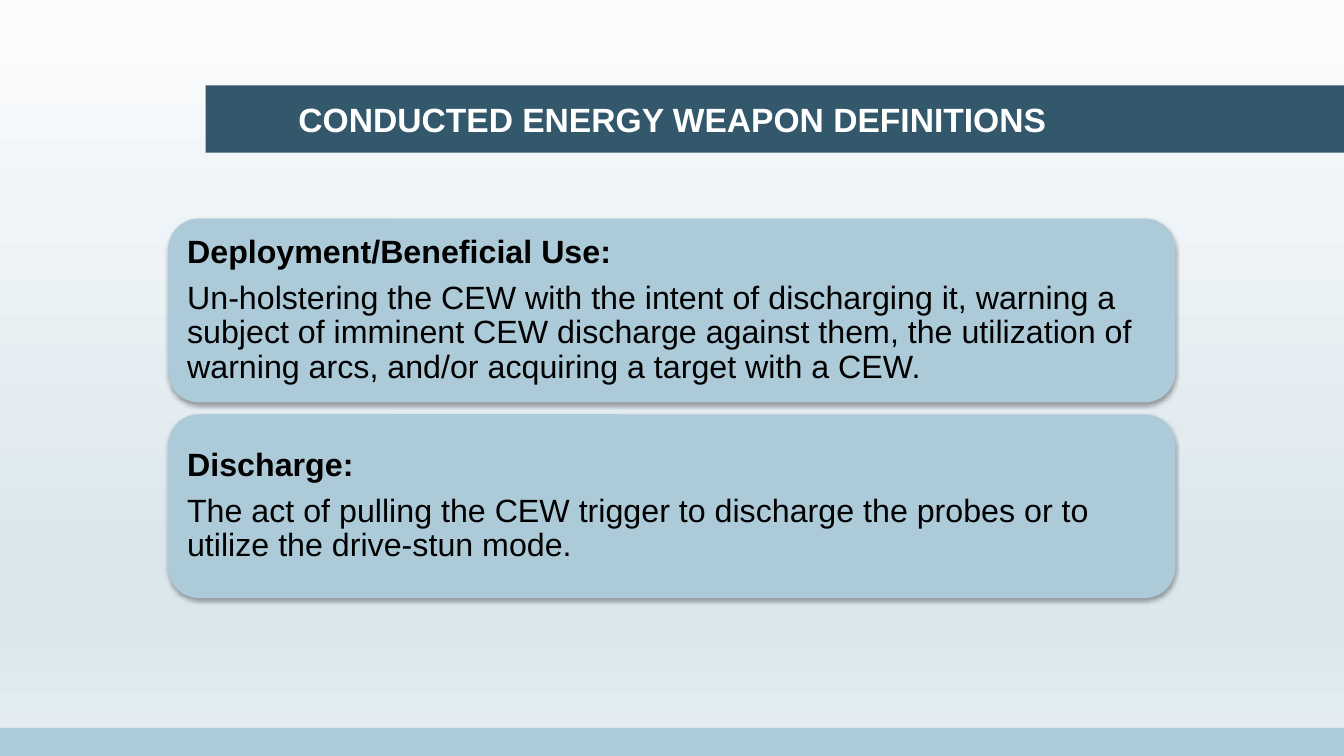
from dataclasses import dataclass

from lxml import etree
from pptx import Presentation
from pptx import util as u
from pptx.dml.color import RGBColor
from pptx.enum import shapes, text
from pptx.oxml.ns import qn


@dataclass(frozen=True)
class Theme:
    font: str = "Arial"
    banner: str = "33576B"
    panel: str = "ACCAD8"
    light: str = "FFFFFF"
    ink: str = "000000"
    title_size: int = 24
    body_size: int = 23
    backdrop: tuple = ((0, "FBFCFD"), (74, "DAE7ED"), (83, "DAE7ED"), (100, "E6EFF3"))


THEME = Theme()
DEFINITIONS = [
    ("Deployment/Beneficial Use:",
     "Un-holstering the CEW with the intent of discharging it, warning a subject of "
     "imminent CEW discharge against them, the utilization of warning arcs, and/or "
     "acquiring a target with a CEW."),
    ("Discharge:",
     "The act of pulling the CEW trigger to discharge the probes or to utilize the "
     "drive-stun mode."),
]


def add_child(parent, tag, **attributes):
    child = etree.SubElement(parent, qn(tag))
    for key, value in attributes.items():
        child.set(key, str(value))
    return child


def write(paragraph, words, size, color, bold=False, align=text.PP_ALIGN.LEFT,
          line_spacing=1.0, after=0):
    paragraph.alignment = align
    paragraph.line_spacing = line_spacing
    paragraph.space_before = u.Pt(0)
    paragraph.space_after = u.Pt(after)
    run = paragraph.add_run()
    run.text = words
    run.font.name = THEME.font
    run.font.size = u.Pt(size)
    run.font.bold = bold
    run.font.color.rgb = RGBColor.from_string(color)


def set_frame(frame, inset):
    frame.word_wrap = True
    frame.auto_size = text.MSO_AUTO_SIZE.NONE
    frame.vertical_anchor = text.MSO_ANCHOR.MIDDLE
    frame.margin_left = frame.margin_right = u.Cm(inset)
    frame.margin_top = frame.margin_bottom = u.Cm(inset)


def add_panel(slide, kind, box, color):
    panel = slide.shapes.add_shape(kind, *map(u.Cm, box))
    panel.shadow.inherit = False
    panel.fill.solid()
    panel.fill.fore_color.rgb = RGBColor.from_string(color)
    panel.line.fill.background()
    return panel


def paint_backdrop(slide):
    slide.background.fill.gradient()
    gradient = slide.element.find(".//" + qn("a:gradFill"))
    stops = gradient.find(qn("a:gsLst"))
    for stop in list(stops):
        stops.remove(stop)
    for percent, color in THEME.backdrop:
        stop = add_child(stops, "a:gs", pos=percent * 1000)
        add_child(stop, "a:srgbClr", val=color)
    gradient.find(qn("a:lin")).set("ang", "5400000")


def add_banner(slide, box, heading):
    left, top, width, height = box
    banner = add_panel(slide, shapes.MSO_SHAPE.RECTANGLE, box, THEME.banner)
    title = slide.shapes.title
    title.left, title.top = u.Cm(left - 0.18), u.Cm(top)
    title.width, title.height = u.Cm(width - 4.8), u.Cm(height)
    set_frame(title.text_frame, 0)
    write(title.text_frame.paragraphs[0], heading, THEME.title_size, THEME.light,
          bold=True, align=text.PP_ALIGN.CENTER)
    banner.element.addnext(title.element)


def add_definition(slide, box, term, meaning):
    card = add_panel(slide, shapes.MSO_SHAPE.ROUNDED_RECTANGLE, box, THEME.panel)
    effects = card.element.spPr.find(qn("a:effectLst"))
    shadow = add_child(effects, "a:outerShdw", blurRad=u.Pt(3.1), dist=u.Pt(1.8),
                       dir=5400000, rotWithShape=0)
    shade = add_child(shadow, "a:srgbClr", val=THEME.ink)
    add_child(shade, "a:alpha", val=35000)
    frame = card.text_frame
    set_frame(frame, 0.25)
    write(frame.paragraphs[0], term, THEME.body_size, THEME.ink, bold=True,
          line_spacing=0.9, after=8)
    write(frame.add_paragraph(), meaning, THEME.body_size, THEME.ink,
          line_spacing=0.9, after=8)


def add_definitions(slide, box, gap):
    left, top, width, height = box
    card_height = (height - gap * (len(DEFINITIONS) - 1)) / len(DEFINITIONS)
    for index, (term, meaning) in enumerate(DEFINITIONS):
        card_top = top + index * (card_height + gap)
        add_definition(slide, (left, card_top, width, card_height), term, meaning)


def main():
    deck = Presentation()
    deck.slide_width, deck.slide_height = u.Cm(33.87), u.Cm(19.05)
    slide = deck.slides.add_slide(deck.slide_layouts.get_by_name("Title Only"))
    paint_backdrop(slide)
    add_banner(slide, (5.18, 2.15, 28.69, 1.7), "CONDUCTED ENERGY WEAPON DEFINITIONS")
    add_panel(slide, shapes.MSO_SHAPE.RECTANGLE, (0, 18.34, 33.87, 0.71), THEME.panel)
    add_definitions(slide, (4.24, 5.51, 25.38, 9.56), gap=0.3)
    deck.save("out.pptx")


if __name__ == "__main__":
    main()
